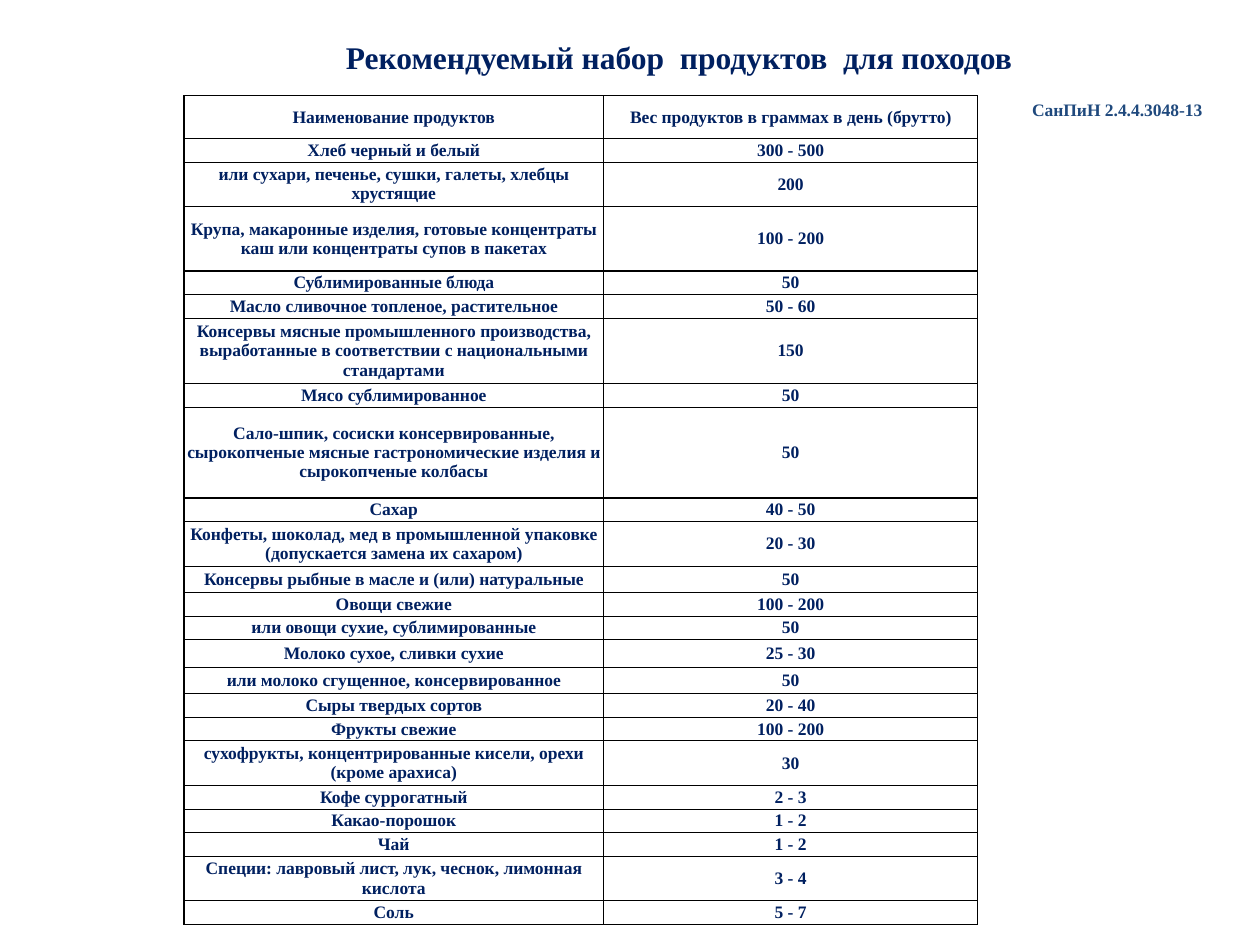
from lxml.etree import SubElement
from pptx import Presentation
from pptx.dml.color import RGBColor
from pptx.enum.text import MSO_ANCHOR, MSO_AUTO_SIZE, PP_ALIGN
from pptx.oxml.ns import qn
from pptx.util import Inches, Pt

NAVY, BLUE, WHITE, BLACK = "002060", "1F497D", "FFFFFF", "000000"


def style(para, size, color, align=PP_ALIGN.CENTER):
    para.alignment = align
    for run in para.runs:
        font = run.font
        font.name = "Times New Roman"
        font.size = Pt(size)
        font.bold = True
        font.color.rgb = RGBColor.from_string(color)


def border(cell):
    """Draw a thin black line on all four sides of the cell."""
    props = cell._tc.get_or_add_tcPr()
    for index, side in enumerate(("lnL", "lnR", "lnT", "lnB")):
        line = props.makeelement(qn(f"a:{side}"), {"w": str(Pt(0.75))})
        fill = SubElement(line, qn("a:solidFill"))
        SubElement(fill, qn("a:srgbClr"), val=BLACK)
        props.insert(index, line)


# Product, grams per day, row height in inches
ROWS = [
    ("Наименование продуктов", "Вес продуктов в граммах в день (брутто)", 0.34),
    ("Хлеб черный и белый", "300 - 500", 0.18),
    ("или сухари, печенье, сушки, галеты, хлебцы хрустящие", "200", 0.34),
    ("Крупа, макаронные изделия, готовые концентраты каш или концентраты "
     "супов в пакетах", "100 - 200", 0.51),
    ("Сублимированные блюда", "50", 0.18),
    ("Масло сливочное топленое, растительное", "50 - 60", 0.18),
    ("Консервы мясные промышленного производства, выработанные в "
     "соответствии с национальными стандартами", "150", 0.51),
    ("Мясо сублимированное", "50", 0.18),
    ("Сало-шпик, сосиски консервированные, сырокопченые мясные "
     "гастрономические изделия и сырокопченые колбасы", "50", 0.72),
    ("Сахар", "40 - 50", 0.18),
    ("Конфеты, шоколад, мед в промышленной упаковке (допускается замена "
     "их сахаром)", "20 - 30", 0.35),
    ("Консервы рыбные в масле и (или) натуральные", "50", 0.21),
    ("Овощи свежие", "100 - 200", 0.18),
    ("или овощи сухие, сублимированные", "50", 0.18),
    ("Молоко сухое, сливки сухие", "25 - 30", 0.22),
    ("или молоко сгущенное, консервированное", "50", 0.21),
    ("Сыры твердых сортов", "20 - 40", 0.18),
    ("Фрукты свежие", "100 - 200", 0.18),
    ("сухофрукты, концентрированные кисели, орехи (кроме арахиса)", "30", 0.34),
    ("Кофе суррогатный", "2 - 3", 0.18),
    ("Какао-порошок", "1 - 2", 0.18),
    ("Чай", "1 - 2", 0.18),
    ("Специи: лавровый лист, лук, чеснок, лимонная кислота", "3 - 4", 0.34),
    ("Соль", "5 - 7", 0.18),
]

deck = Presentation()
deck.slide_width, deck.slide_height = Inches(10), Inches(7.5)
slide = deck.slides.add_slide(deck.slide_layouts[5])

# Title
title = slide.shapes.title
title.left, title.top = Inches(1.06), Inches(0.3)
title.width, title.height = Inches(8.66), Inches(0.3)
title.fill.solid()
title.fill.fore_color.rgb = RGBColor.from_string(WHITE)
frame = title.text_frame
frame.text = "Рекомендуемый набор  продуктов  для походов"
frame.margin_left = frame.margin_right = 0
frame.margin_top = frame.margin_bottom = 0
frame.vertical_anchor = MSO_ANCHOR.MIDDLE
frame.auto_size = MSO_AUTO_SIZE.SHAPE_TO_FIT_TEXT
style(frame.paragraphs[0], 18, NAVY)

# Sanitary code reference
note = slide.shapes.add_textbox(Inches(3.61), Inches(0.68), Inches(6.03), Inches(0.34))
frame = note.text_frame
frame.word_wrap = True
frame.auto_size = MSO_AUTO_SIZE.SHAPE_TO_FIT_TEXT
para = frame.paragraphs[0]
for text in (" ", "СанПиН 2.4.4.3048-13"):
    para.add_run().text = text
style(para, 10, BLUE, PP_ALIGN.RIGHT)
para.runs[0].font.size = Pt(14)

# Product table
table = slide.shapes.add_table(
    len(ROWS), 2, Inches(1.46), Inches(0.76), Inches(6.3), Inches(6.52)
).table
table.first_row = table.horz_banding = False
for column, width in zip(table.columns, (3.33, 2.97)):
    column.width = Inches(width)
for row, (*texts, height) in zip(table.rows, ROWS):
    row.height = Inches(height)
    for cell, text in zip(row.cells, texts):
        cell.text_frame.text = text
        cell.vertical_anchor = MSO_ANCHOR.MIDDLE
        cell.margin_left = cell.margin_right = Inches(0.01)
        cell.margin_top = cell.margin_bottom = Inches(0.01)
        cell.fill.solid()
        cell.fill.fore_color.rgb = RGBColor.from_string(WHITE)
        style(cell.text_frame.paragraphs[0], 10, NAVY)
        border(cell)

deck.save("out.pptx")
